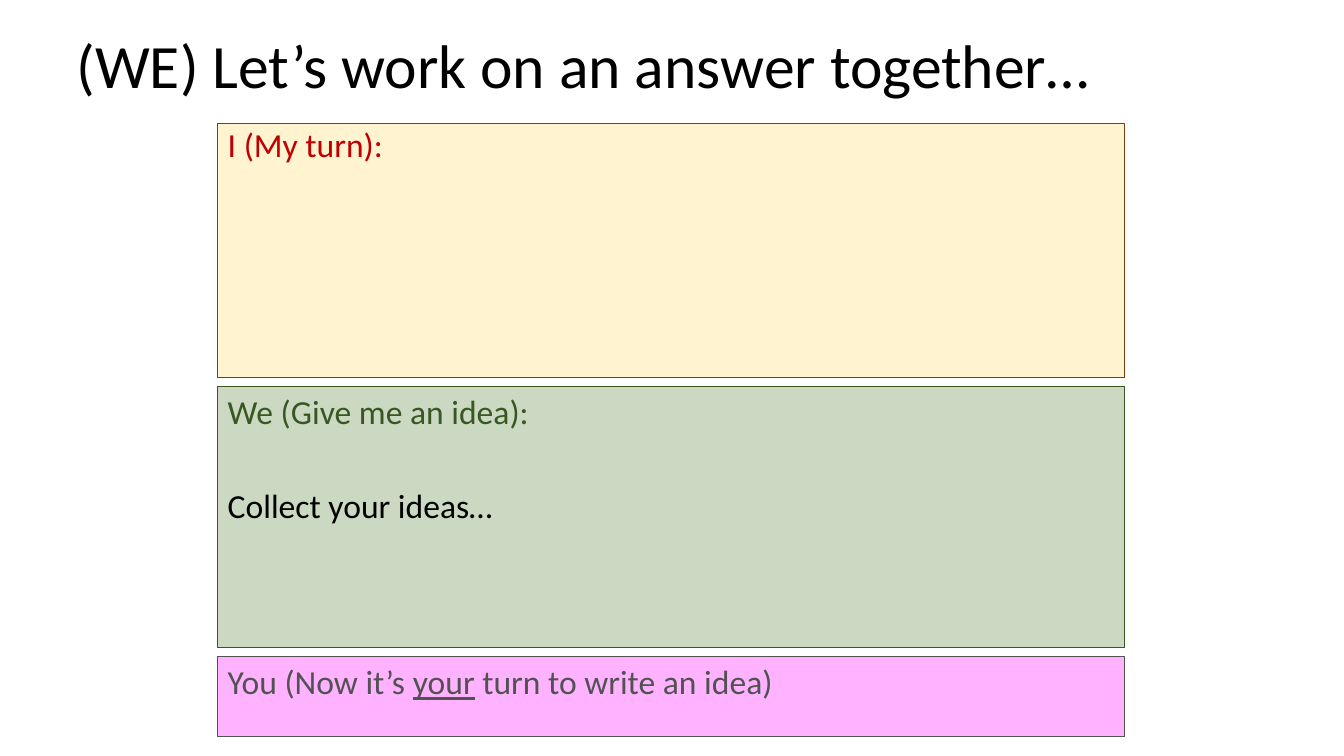
from dataclasses import dataclass

from lxml.etree import SubElement
from pptx import Presentation
from pptx.dml.color import RGBColor
from pptx.enum.shapes import MSO_SHAPE as Preset
from pptx.enum.text import MSO_ANCHOR as Anchor, PP_ALIGN as Align
from pptx.oxml.ns import qn
from pptx.slide import Slide
from pptx.text.text import TextFrame
from pptx.util import Cm, Pt

FONT = "Calibri"
COLORS = {
    "black": "000000",
    "gold": "FFD966",
    "brown": "843C0B",
    "red": "C00000",
    "green": "548235",
    "dark green": "385723",
    "magenta": "FF00FF",
    "grey": "525252",
}
PANEL_LEFT, PANEL_WIDTH = 5.49, 22.86
FIRST_PANEL_TOP, PANEL_GAP = 3.12, 0.21
FILL_OPACITY = 30


@dataclass(frozen=True)
class Run:
    text: str
    color: str
    underline: bool = False


@dataclass(frozen=True)
class Line:
    runs: tuple[Run, ...]
    space_before: float = 0
    spacing: float = 1.0


@dataclass(frozen=True)
class Panel:
    height: float
    fill: str
    border: str
    lines: tuple[Line, ...]


TITLE = Line((Run("(WE) Let’s work on an answer together…", "black"),), spacing=0.9)
PANELS = (
    Panel(6.4, "gold", "brown", (
        Line((Run("I (My turn):", "red"),), spacing=0.9),
    )),
    Panel(6.6, "green", "dark green", (
        Line((Run("We (Give me an idea):", "dark green"),)),
        Line((Run("Collect your ideas…", "black"),), space_before=38),
    )),
    Panel(2.01, "magenta", "grey", (
        Line((
            Run("You (Now it’s ", "grey"),
            Run("your", "grey", underline=True),
            Run(" turn to write an idea)", "grey"),
        )),
    )),
)


def rgb(color: str) -> RGBColor:
    return RGBColor.from_string(COLORS[color])


def write_lines(frame: TextFrame, lines: tuple[Line, ...], size: float, anchor: Anchor) -> None:
    frame.word_wrap = True
    frame.vertical_anchor = anchor
    for index, line in enumerate(lines):
        paragraph = frame.add_paragraph() if index else frame.paragraphs[0]
        paragraph.alignment = Align.LEFT
        paragraph.line_spacing = line.spacing
        paragraph.space_before = Pt(line.space_before)
        for part in line.runs:
            run = paragraph.add_run()
            run.text = part.text
            run.font.name = FONT
            run.font.size = Pt(size)
            run.font.color.rgb = rgb(part.color)
            run.font.underline = part.underline


def draw_title(slide: Slide) -> None:
    title = slide.shapes.add_textbox(Cm(1.68), Cm(0.76), Cm(26.7), Cm(1.96))
    write_lines(title.text_frame, (TITLE,), 44, Anchor.MIDDLE)


def draw_panel(slide: Slide, panel: Panel, top: float) -> None:
    box = slide.shapes.add_shape(
        Preset.RECTANGLE, Cm(PANEL_LEFT), Cm(top), Cm(PANEL_WIDTH), Cm(panel.height)
    )
    box.shadow.inherit = False
    box.fill.solid()
    box.fill.fore_color.rgb = rgb(panel.fill)
    fill_color = box.element.spPr.find(f"{qn('a:solidFill')}/{qn('a:srgbClr')}")
    SubElement(fill_color, qn("a:alpha"), val=str(FILL_OPACITY * 1000))
    box.line.color.rgb = rgb(panel.border)
    box.line.width = Pt(0.75)
    write_lines(box.text_frame, panel.lines, 24, Anchor.TOP)


def main() -> None:
    deck = Presentation()
    deck.slide_width, deck.slide_height = Cm(33.87), Cm(19.05)
    slide = deck.slides.add_slide(deck.slide_layouts[6])
    draw_title(slide)
    top = FIRST_PANEL_TOP
    for panel in PANELS:
        draw_panel(slide, panel, top)
        top += panel.height + PANEL_GAP
    deck.save("out.pptx")


if __name__ == "__main__":
    main()
